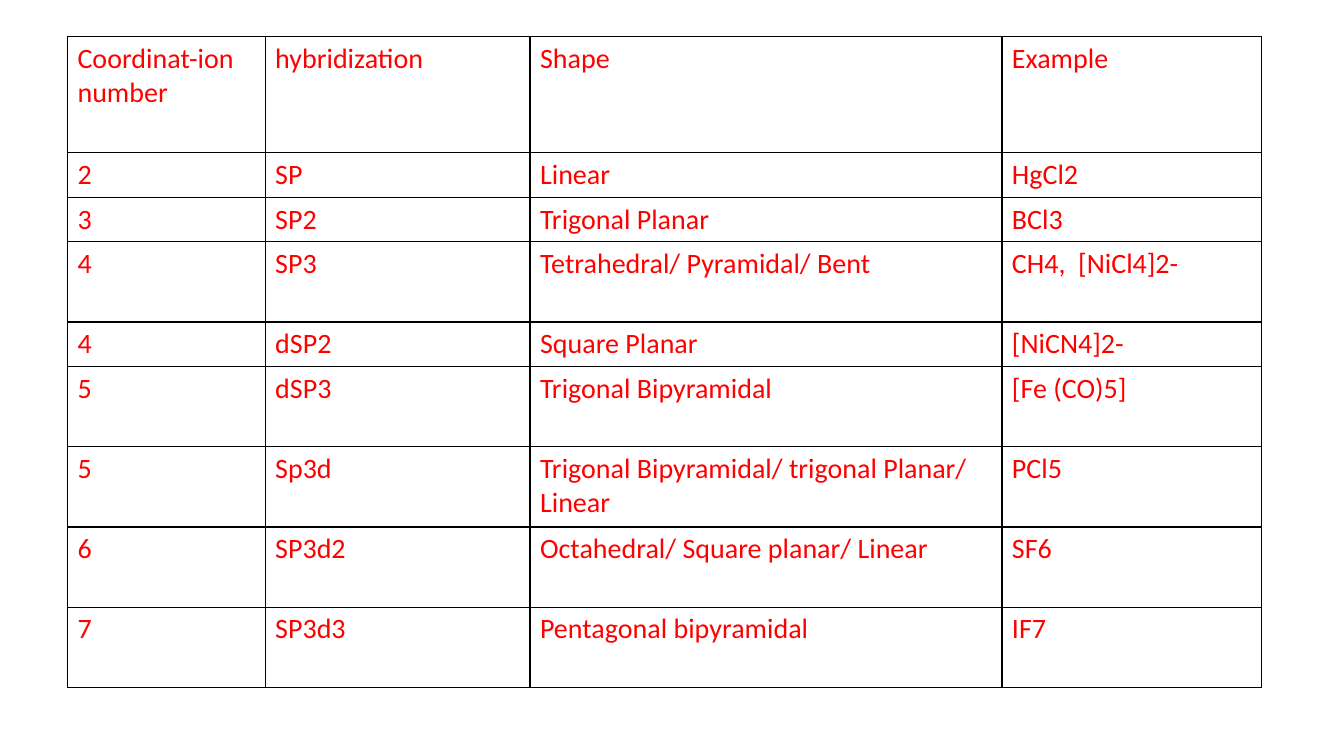
from dataclasses import dataclass

from lxml.etree import SubElement as Sub
from pptx import Presentation as Deck
from pptx.dml.color import RGBColor as Rgb
from pptx.oxml.ns import qn
from pptx.util import Pt

RED, BLACK = "FF0000", "000000"
FONT, SIZE = "Calibri", 20
LEFT, TOP = 48.2, 26.3
WIDTHS = (141.2, 189.2, 337.1, 185.7)
HEAD, LOW, HIGH = 82.9, 31.8, 57.3


@dataclass
class Row:
    height: float
    number: str
    hybrid: str
    shape: str
    sample: str

    def texts(self) -> tuple[str, ...]:
        return self.number, self.hybrid, self.shape, self.sample


ROWS = [
    Row(HEAD, "Coordinat-ion number", "hybridization", "Shape", "Example"),
    Row(LOW, "2", "SP", "Linear", "HgCl2"),
    Row(LOW, "3", "SP2", "Trigonal Planar", "BCl3"),
    Row(HIGH, "4", "SP3", "Tetrahedral/ Pyramidal/ Bent", "CH4,  [NiCl4]2-"),
    Row(LOW, "4", "dSP2", "Square Planar", "[NiCN4]2-"),
    Row(HIGH, "5", "dSP3", "Trigonal Bipyramidal", "[Fe (CO)5]"),
    Row(HIGH, "5", "Sp3d", "Trigonal Bipyramidal/ trigonal Planar/ Linear", "PCl5"),
    Row(HIGH, "6", "SP3d2", "Octahedral/ Square planar/ Linear", "SF6"),
    Row(HIGH, "7", "SP3d3", "Pentagonal bipyramidal", "IF7"),
]


def color(code: str) -> Rgb:
    return Rgb.from_string(code)


def border(cell, code: str, width: float) -> None:
    props = cell._tc.get_or_add_tcPr()
    for side in ("lnL", "lnR", "lnT", "lnB"):
        line = Sub(props, qn(f"a:{side}"), w=str(Pt(width)))
        fill = Sub(line, qn("a:solidFill"))
        Sub(fill, qn("a:srgbClr"), val=code)


def write(cell, text: str) -> None:
    border(cell, BLACK, 1)
    cell.fill.background()
    cell.text = text
    font = cell.text_frame.paragraphs[0].font
    font.name, font.size, font.bold = FONT, Pt(SIZE), False
    font.color.rgb = color(RED)


def draw(slide, rows: list[Row]) -> None:
    height = sum(row.height for row in rows)
    frame = slide.shapes.add_table(
        len(rows), len(WIDTHS), Pt(LEFT), Pt(TOP), Pt(sum(WIDTHS)), Pt(height))
    table = frame.table
    table.horz_banding = False
    for column, width in zip(table.columns, WIDTHS):
        column.width = Pt(width)
    for line, row in zip(table.rows, rows):
        line.height = Pt(row.height)
        for cell, text in zip(line.cells, row.texts()):
            write(cell, text)


def main() -> None:
    deck = Deck()
    deck.slide_width, deck.slide_height = Pt(960), Pt(540)
    # Blank layout
    slide = deck.slides.add_slide(deck.slide_layouts[6])
    # Table of shapes by coordination number
    draw(slide, ROWS)
    deck.save("out.pptx")


if __name__ == "__main__":
    main()
